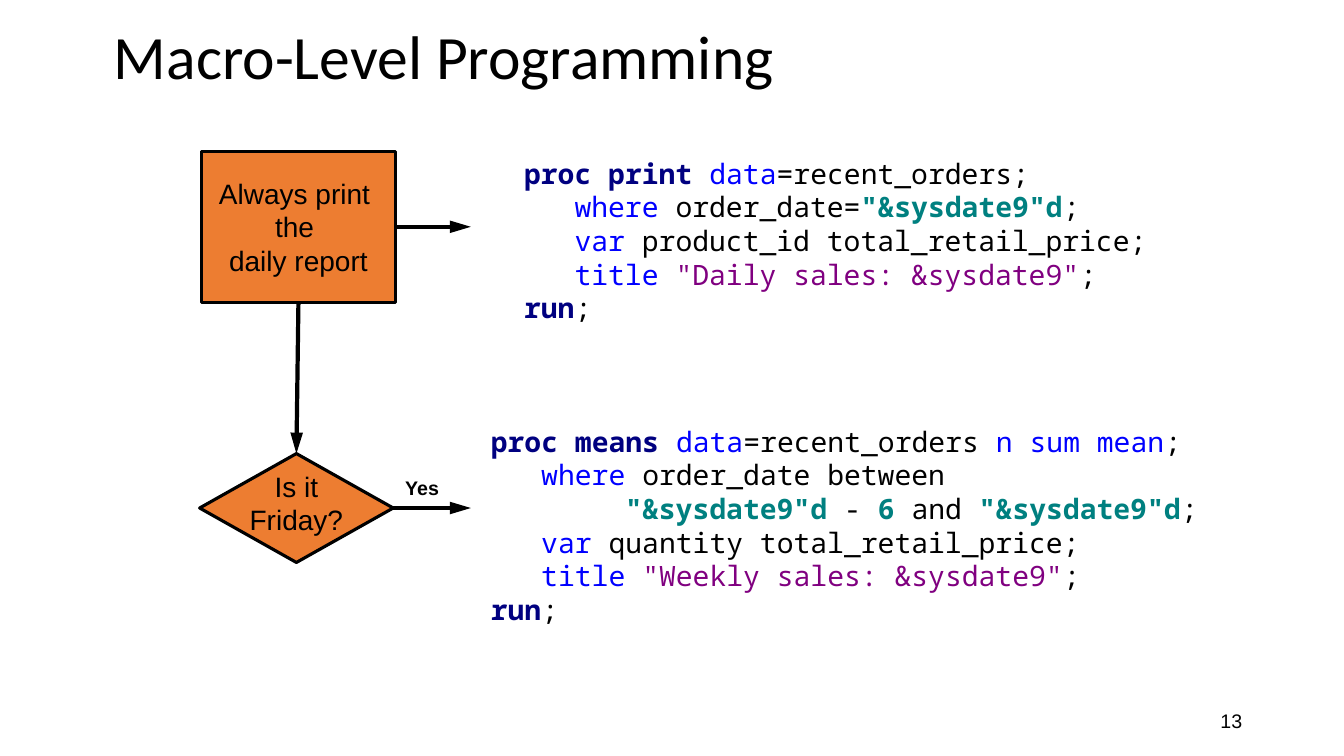
from dataclasses import dataclass

from lxml import etree
from pptx import Presentation
from pptx import util as u
from pptx.dml.color import RGBColor
from pptx.enum import shapes, text
from pptx.oxml import ns

PX = 9144


@dataclass(frozen=True)
class Theme:
    """Colours, fonts and type sizes of the slide."""
    ink: str = "000000"
    step_fill: str = "ED7D31"
    title_font: str = "Calibri"
    label_font: str = "Arial"
    code_font: str = "Noto Sans Mono"
    title_size: int = 44
    body_size: int = 20
    small_size: int = 14
    code_pitch: int = 24
    code_char: int = 12


THEME = Theme()

PROC, KEY, PLAIN, DATE, QUOTE = "proc", "key", "plain", "date", "quote"
SYNTAX = {
    PROC: ("000080", True),
    KEY: ("0000FF", False),
    PLAIN: (THEME.ink, False),
    DATE: ("008080", True),
    QUOTE: ("800080", False),
}

DAILY_CODE = [
    (0, [("proc print ", PROC), ("data", KEY), ("=recent_orders;", PLAIN)]),
    (3, [("where ", KEY), ("order_date=", PLAIN), ('"&sysdate9"d', DATE), (";", PLAIN)]),
    (3, [("var ", KEY), ("product_id total_retail_price;", PLAIN)]),
    (3, [("title ", KEY), ('"Daily sales: &sysdate9"', QUOTE), (";", PLAIN)]),
    (0, [("run", PROC), (";", PLAIN)]),
]
WEEKLY_CODE = [
    (0, [("proc means ", PROC), ("data", KEY), ("=recent_orders ", PLAIN),
         ("n sum mean", KEY), (";", PLAIN)]),
    (3, [("where ", KEY), ("order_date between", PLAIN)]),
    (8, [('"&sysdate9"d', DATE), (" - ", PLAIN), ("6", DATE), (" and ", PLAIN),
         ('"&sysdate9"d', DATE), (";", PLAIN)]),
    (3, [("var", KEY), (" quantity total_retail_price;", PLAIN)]),
    (3, [("title ", KEY), ('"Weekly sales: &sysdate9"', QUOTE), (";", PLAIN)]),
    (0, [("run", PROC), (";", PLAIN)]),
]


def emu(box):
    """Turn px lengths into EMU."""
    return [u.Emu(length * PX) for length in box]


def add_run(paragraph, wording, size, font, color=THEME.ink, bold=False):
    """Add one formatted run."""
    run = paragraph.add_run()
    run.text = wording
    run.font.size = u.Pt(size)
    run.font.name = font
    run.font.bold = bold
    run.font.color.rgb = RGBColor.from_string(color)


def add_title(slide, box, wording):
    """Fill and place the title placeholder."""
    title = slide.shapes.title
    title.left, title.top, title.width, title.height = emu(box)
    title.text_frame.vertical_anchor = text.MSO_ANCHOR.MIDDLE
    heading = title.text_frame.paragraphs[0]
    heading.alignment = text.PP_ALIGN.LEFT
    heading.line_spacing = 0.9
    add_run(heading, wording, THEME.title_size, THEME.title_font)


def add_label(slide, box, wording, bold=False, align=text.PP_ALIGN.LEFT,
              anchor=text.MSO_ANCHOR.TOP):
    """Add a small one-line label."""
    frame = slide.shapes.add_textbox(*emu(box)).text_frame
    frame.word_wrap = True
    frame.vertical_anchor = anchor
    line = frame.paragraphs[0]
    line.alignment = align
    add_run(line, wording, THEME.small_size, THEME.label_font, bold=bold)


def add_step(slide, box, outline, lines, bottom_inset=5):
    """Add a flowchart step with centred lines."""
    step = slide.shapes.add_shape(outline, *emu(box))
    step.shadow.inherit = False
    step.fill.solid()
    step.fill.fore_color.rgb = RGBColor.from_string(THEME.step_fill)
    step.line.color.rgb = RGBColor.from_string(THEME.ink)
    step.line.width = u.Pt(2.25)
    frame = step.text_frame
    frame.word_wrap = False
    frame.vertical_anchor = text.MSO_ANCHOR.MIDDLE
    frame.margin_bottom = u.Emu(bottom_inset * PX)
    label = frame.paragraphs[0]
    label.alignment = text.PP_ALIGN.CENTER
    for number, line in enumerate(lines):
        if number:
            label.add_line_break()
        add_run(label, line, THEME.body_size, THEME.label_font)
    return step


def add_arrow(slide, source, site, end):
    """Add an arrow from a connection site of a step to a point."""
    arrow = slide.shapes.add_connector(shapes.MSO_CONNECTOR.STRAIGHT, 0, 0, *end)
    arrow.begin_connect(source, site)
    arrow.line.color.rgb = RGBColor.from_string(THEME.ink)
    arrow.line.width = u.Pt(3)
    etree.SubElement(arrow.line._get_or_add_ln(), ns.qn("a:tailEnd"),
                     type="triangle", w="med", len="lg")
    etree.SubElement(arrow._element.spPr, ns.qn("a:effectLst"))
    return arrow


def add_code(slide, box, listing):
    """Add a coloured code listing, indented by characters."""
    frame = slide.shapes.add_textbox(*emu(box)).text_frame
    frame.word_wrap = True
    for number, (indent, tokens) in enumerate(listing):
        line = frame.add_paragraph() if number else frame.paragraphs[0]
        line.line_spacing = u.Pt(THEME.code_pitch)
        margin = u.Pt(indent * THEME.code_char)
        line._p.get_or_add_pPr().set("marL", str(margin))
        for wording, kind in tokens:
            color, bold = SYNTAX[kind]
            add_run(line, wording, THEME.body_size, THEME.code_font, color, bold)


def add_flow(slide, left, top):
    """Add the two steps, their arrows and the answer label."""
    report = add_step(slide, (left + 2, top, 192, 150),
                      shapes.MSO_SHAPE.FLOWCHART_PROCESS,
                      ["Always print ", "the ", "daily report"])
    friday = add_step(slide, (left, top + 300, 192, 108),
                      shapes.MSO_SHAPE.FLOWCHART_DECISION,
                      ["Is it", "Friday?"], bottom_inset=15)
    down = add_arrow(slide, report, 2, (0, 0))
    down.end_connect(friday, 0)
    for step in (report, friday):
        add_arrow(slide, step, 3,
                  (u.Emu((left + 269) * PX), step.top + step.height // 2))
    add_label(slide, (left + 194, top + 317, 83, 33), "Yes", bold=True)


def main():
    """Build and save the slide."""
    deck = Presentation()
    deck.slide_width, deck.slide_height = emu((1333, 750))
    slide = deck.slides.add_slide(deck.slide_layouts[5])
    add_title(slide, (103, 2, 1150, 114), "Macro-Level Programming")
    add_flow(slide, 198, 150)
    add_code(slide, (510, 150, 667, 178), DAILY_CODE)
    add_code(slide, (477, 416, 790, 212), WEEKLY_CODE)
    add_label(slide, (942, 695, 300, 40), "13", align=text.PP_ALIGN.RIGHT,
              anchor=text.MSO_ANCHOR.MIDDLE)
    deck.save("out.pptx")


if __name__ == "__main__":
    main()
